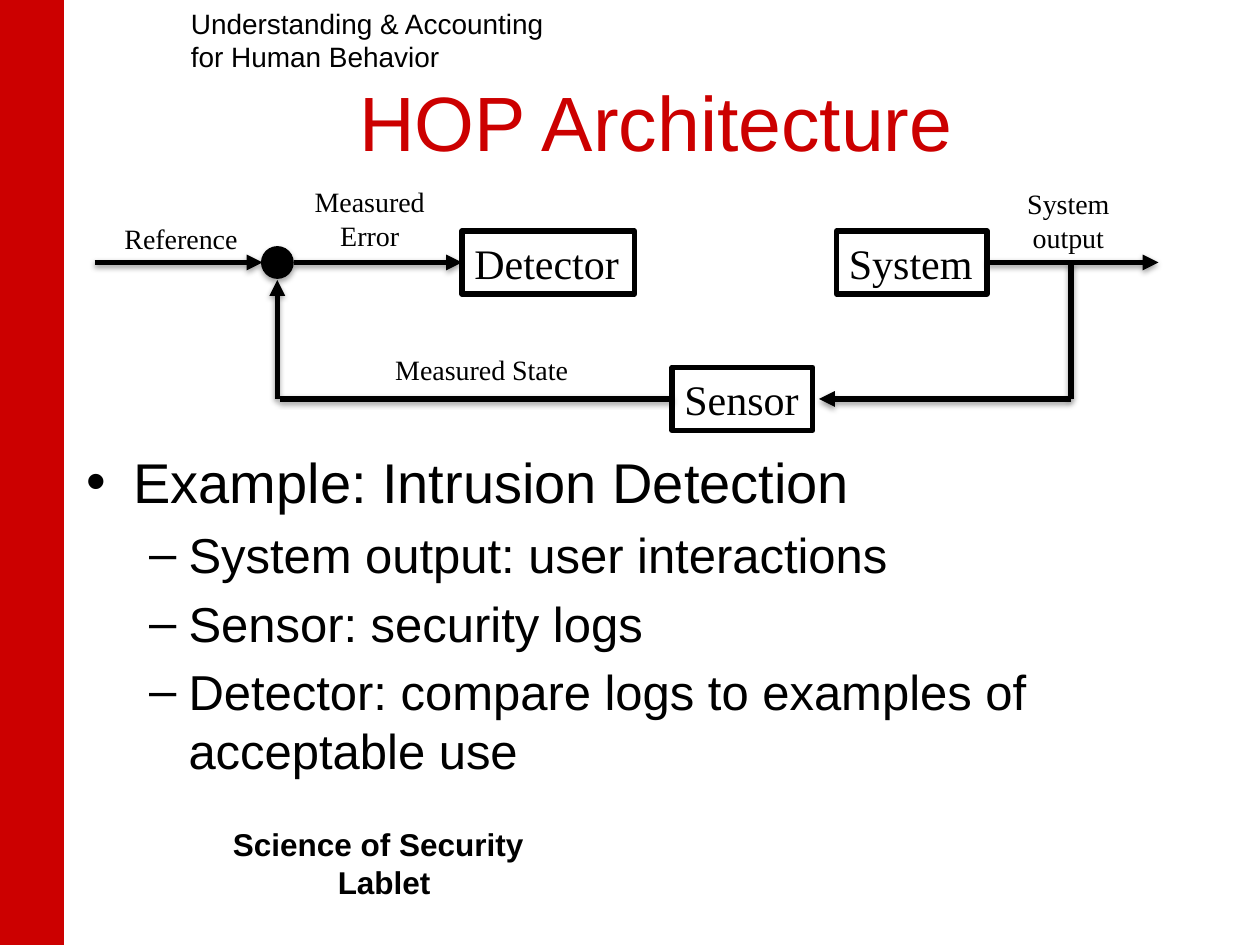
from dataclasses import dataclass

from lxml import etree
from pptx import Presentation
from pptx import util as u
from pptx.dml.color import RGBColor
from pptx.enum import shapes, text
from pptx.oxml.ns import qn

Pt = u.Pt
LEFT, CENTER = text.PP_ALIGN.LEFT, text.PP_ALIGN.CENTER


@dataclass(frozen=True)
class Theme:
    red: RGBColor = RGBColor(0xCC, 0x00, 0x00)
    black: RGBColor = RGBColor(0x00, 0x00, 0x00)
    sans: str = "Arial"
    serif: str = "Times New Roman"
    title: int = 44
    body: tuple = (32, 28)
    box: int = 24
    lablet: int = 18
    label: int = 16
    thick: int = 3
    thin: float = 0.75


theme = Theme()


def set_font(paragraph, size, name=theme.sans, color=theme.black, bold=False):
    font = paragraph.font
    font.name, font.size, font.bold = name, Pt(size), bold
    font.color.rgb = color


def fill_frame(shape, lines, alignments, size, name, bold=False, wrap=False):
    """Write one paragraph per line and let the shape grow to fit them."""
    frame = shape.text_frame
    frame.text = "\n".join(lines)
    frame.word_wrap = wrap
    frame.auto_size = text.MSO_AUTO_SIZE.SHAPE_TO_FIT_TEXT
    for paragraph, alignment in zip(frame.paragraphs, alignments):
        paragraph.alignment = alignment
        set_font(paragraph, size, name, bold=bold)


presentation = Presentation()
presentation.slide_width, presentation.slide_height = Pt(720), Pt(540)
slide = presentation.slides.add_slide(presentation.slide_layouts[1])

# Side bar
bar = slide.shapes.add_shape(shapes.MSO_SHAPE.RECTANGLE, 0, 0, Pt(36), Pt(540))
bar.shadow.inherit = False
bar.fill.solid()
bar.fill.fore_color.rgb = bar.line.color.rgb = theme.red
bar.line.width = Pt(theme.thin)

# Title and list
title = slide.shapes.title
title.left, title.top, title.width, title.height = Pt(42), Pt(30), Pt(666), Pt(78)
title.text_frame.text = "HOP Architecture"
title.text_frame.paragraphs[0].alignment = CENTER
set_font(title.text_frame.paragraphs[0], theme.title, color=theme.red)

body = slide.placeholders[1]
body.left, body.top, body.width, body.height = Pt(42), Pt(252), Pt(666), Pt(196)
body.text_frame.text = "\n".join([
    "Example: Intrusion Detection",
    "System output: user interactions",
    "Sensor: security logs",
    "Detector: compare logs to examples of acceptable use",
])
body.text_frame.auto_size = text.MSO_AUTO_SIZE.NONE
for index, paragraph in enumerate(body.text_frame.paragraphs):
    paragraph.level = min(index, 1)
    set_font(paragraph, theme.body[paragraph.level])
body.text_frame.paragraphs[0].space_before = Pt(0)

# Loop geometry: forward path above, feedback path below
forward_y, feedback_y = 150, 228
dot_x, branch_x = 158.5, 612
dot_size, box_height = 18, 36

# Boxes
boxes = {}
for name, left, width, middle in [
    ("Detector", 264, 98.5, forward_y),
    ("System", 478, 86, forward_y),
    ("Sensor", 384, 80.5, feedback_y),
]:
    box = slide.shapes.add_shape(
        shapes.MSO_SHAPE.RECTANGLE,
        Pt(left), Pt(middle - box_height / 2), Pt(width), Pt(box_height))
    box.shadow.inherit = False
    box.fill.background()
    box.line.color.rgb = theme.black
    box.line.width = Pt(theme.thick)
    fill_frame(box, [name], [LEFT], theme.box, theme.serif)
    boxes[name] = box

# Lines and arrows; these and the dot keep the theme's soft shadow
connectors = {}
for name, x1, y1, x2, y2, arrow in [
    ("reference", 54, forward_y, 150, forward_y, True),
    ("error", 168, forward_y, 264, forward_y, True),
    ("output", 564, forward_y, 662, forward_y, True),
    ("branch", branch_x, feedback_y, branch_x, forward_y, False),
    ("to sensor", branch_x, feedback_y, 468, feedback_y, True),
    ("from sensor", 384, feedback_y, 160, feedback_y, False),
    ("state", dot_x, feedback_y, dot_x, 160, True),
]:
    connector = slide.shapes.add_connector(
        shapes.MSO_CONNECTOR.STRAIGHT, Pt(x1), Pt(y1), Pt(x2), Pt(y2))
    connector.line.color.rgb = theme.black
    connector.line.width = Pt(theme.thick)
    if arrow:
        etree.SubElement(connector.line._get_or_add_ln(), qn("a:tailEnd"), type="triangle")
    connectors[name] = connector
connectors["error"].end_connect(boxes["Detector"], 1)
connectors["output"].begin_connect(boxes["System"], 3)
connectors["from sensor"].begin_connect(boxes["Sensor"], 1)

# Comparison point
dot = slide.shapes.add_shape(
    shapes.MSO_SHAPE.OVAL, Pt(dot_x - dot_size / 2), Pt(forward_y - dot_size / 2),
    Pt(dot_size), Pt(dot_size))
dot.fill.solid()
dot.fill.fore_color.rgb = dot.line.color.rgb = theme.black
dot.line.width = Pt(theme.thin)

# Diagram labels
for lines, left, top, width, height in [
    (["Reference"], 63.5, 123, 80, 26.5),
    (["Measured", "Error"], 172, 102, 78.5, 46),
    (["System", "output"], 579.5, 103, 62, 46),
    (["Measured State"], 218, 198, 114.5, 26.5),
]:
    label = slide.shapes.add_textbox(Pt(left), Pt(top), Pt(width), Pt(height))
    fill_frame(label, lines, [CENTER] * len(lines), theme.label, theme.serif)

# Header and footer
header = slide.shapes.add_textbox(Pt(102), 0, Pt(218), Pt(46))
fill_frame(header, ["Understanding & Accounting", "for Human Behavior"],
           [LEFT, LEFT], theme.label, theme.sans)
footer = slide.shapes.add_textbox(Pt(126), Pt(468), Pt(187), Pt(51))
fill_frame(footer, ["Science of Security", "Lablet"],
           [LEFT, CENTER], theme.lablet, theme.sans, bold=True, wrap=True)

presentation.save("out.pptx")
